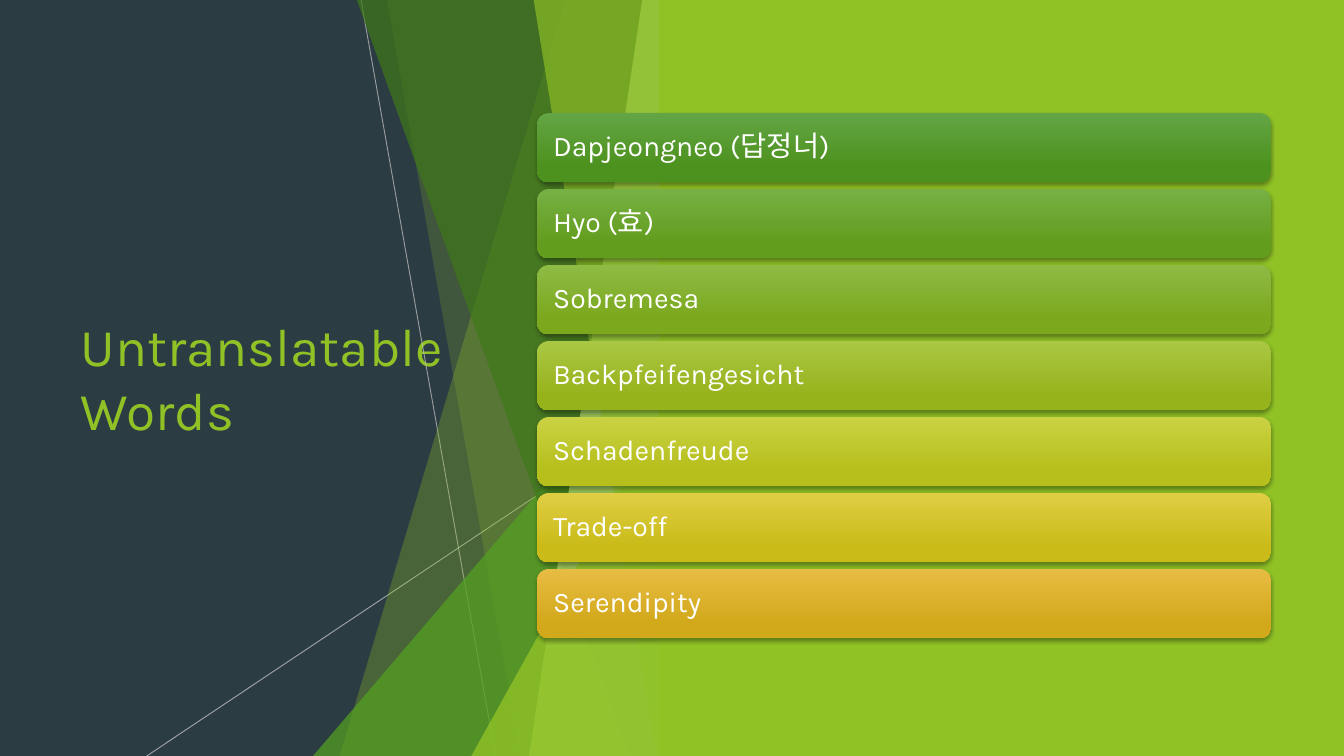
from lxml import etree
from pptx import Presentation
from pptx.dml.color import RGBColor
from pptx.enum.shapes import MSO_CONNECTOR, MSO_SHAPE
from pptx.enum.text import MSO_ANCHOR, PP_ALIGN
from pptx.oxml.ns import qn
from pptx.util import Cm, Pt

STRAIGHT = MSO_CONNECTOR.STRAIGHT
RECT, ROUNDED = MSO_SHAPE.RECTANGLE, MSO_SHAPE.ROUNDED_RECTANGLE
TRIANGLE = MSO_SHAPE.ISOSCELES_TRIANGLE
MIDDLE, LEFT = MSO_ANCHOR.MIDDLE, PP_ALIGN.LEFT

SLATE = RGBColor(0x2C, 0x3C, 0x43)
LIME = RGBColor(0x90, 0xC2, 0x26)
GREEN = RGBColor(0x54, 0xA0, 0x21)
FOREST = RGBColor(0x3F, 0x78, 0x19)
PALE = RGBColor(0xC0, 0xE4, 0x74)
SILVER = RGBColor(0xBF, 0xBF, 0xBF)
WHITE = RGBColor(0xFF, 0xFF, 0xFF)

WIDTH, HEIGHT = 38.38, 21.59
FACET_RIGHT = 19.18
PANEL_LEFT = 18.82
BAR_LEFT, BAR_TOP, BAR_WIDTH, BAR_HEIGHT = 15.34, 3.23, 20.96, 1.98
BAR_PITCH = 2.17

# Word, top and bottom colour of its bar
WORDS = [
    ("Dapjeongneo (답정너)", RGBColor(0x63, 0xA5, 0x45), RGBColor(0x4D, 0x92, 0x1E)),
    ("Hyo (효)", RGBColor(0x77, 0xB0, 0x44), RGBColor(0x62, 0x9D, 0x1E)),
    ("Sobremesa", RGBColor(0x8E, 0xBB, 0x44), RGBColor(0x7B, 0xA8, 0x1D)),
    ("Backpfeifengesicht", RGBColor(0xAA, 0xC7, 0x44), RGBColor(0x97, 0xB3, 0x1C)),
    ("Schadenfreude", RGBColor(0xCA, 0xD2, 0x43), RGBColor(0xB6, 0xBF, 0x1B)),
    ("Trade-off", RGBColor(0xDF, 0xCE, 0x43), RGBColor(0xCA, 0xBB, 0x19)),
    ("Serendipity", RGBColor(0xE7, 0xBC, 0x43), RGBColor(0xD2, 0xA9, 0x1B)),
]


def set_alpha(parent, percent):
    """Make the solid colour inside an element partly transparent."""
    color = next(parent.iter(qn("a:srgbClr")))
    etree.SubElement(color, qn("a:alpha"), val=str(percent * 1000))


class Deck:
    font = "Karla"

    def __init__(self, prs):
        self.s = prs.slides.add_slide(prs.slide_layouts[6])
        fill = self.s.background.fill
        fill.solid()
        fill.fore_color.rgb = SLATE

    def paint(self, sp, color, alpha=100):
        sp.shadow.inherit = False
        sp.fill.solid()
        sp.fill.fore_color.rgb = color
        sp.line.fill.background()
        if alpha < 100:
            set_alpha(sp.fill._xPr.find(qn("a:solidFill")), alpha)

    def line(self, x1, y1, x2, y2, alpha):
        ln = self.s.shapes.add_connector(STRAIGHT, Cm(x1), Cm(y1), Cm(x2), Cm(y2))
        ln.line.color.rgb = SILVER
        ln.line.width = Pt(0.75)
        sp_pr = ln._element.spPr
        set_alpha(sp_pr, alpha)
        etree.SubElement(sp_pr, qn("a:effectLst"))

    def facet(self, top_x, bottom_x, color, alpha):
        """Full-height sliver that ends at the common right edge."""
        builder = self.s.shapes.build_freeform(Cm(top_x), 0)
        corners = [(FACET_RIGHT, 0), (FACET_RIGHT, HEIGHT), (bottom_x, HEIGHT)]
        builder.add_line_segments([(Cm(x), Cm(y)) for x, y in corners])
        self.paint(builder.convert_to_shape(), color, alpha)

    def corner(self, left, top, color, alpha):
        """Right triangle standing on the bottom edge."""
        sp = self.s.shapes.add_shape(TRIANGLE, Cm(left), Cm(top),
                                     Cm(FACET_RIGHT - left), Cm(HEIGHT - top))
        sp.adjustments[0] = 1
        self.paint(sp, color, alpha)

    def panel(self, left, color):
        sp = self.s.shapes.add_shape(RECT, Cm(left), 0, Cm(WIDTH - left), Cm(HEIGHT))
        self.paint(sp, color)

    def text(self, sp, words, size, color):
        tf = sp.text_frame
        tf.word_wrap = True
        tf.vertical_anchor = MIDDLE
        p = tf.paragraphs[0]
        p.alignment = LEFT
        r = p.add_run()
        r.text = words
        r.font.name = self.font
        r.font.size = Pt(size)
        r.font.color.rgb = color
        return tf

    def title(self, words, left, top, width, height):
        sp = self.s.shapes.add_textbox(Cm(left), Cm(top), Cm(width), Cm(height))
        self.text(sp, words, 43, LIME)

    def bar(self, words, top, light, dark):
        sp = self.s.shapes.add_shape(ROUNDED, Cm(BAR_LEFT), Cm(top),
                                     Cm(BAR_WIDTH), Cm(BAR_HEIGHT))
        sp.line.fill.background()
        sp.fill.gradient()
        sp.fill.gradient_angle = 270
        for stop, color, position in zip(sp.fill.gradient_stops, (light, dark), (0, 0.78)):
            stop.color.rgb = color
            stop.position = position
        self.drop_shadow(sp)
        tf = self.text(sp, words, 23, WHITE)
        tf.margin_left = tf.margin_right = Cm(0.36)
        tf.paragraphs[0].line_spacing = 0.9

    def drop_shadow(self, sp):
        sp.shadow.inherit = False
        effects = sp._element.spPr.find(qn("a:effectLst"))
        shadow = etree.SubElement(effects, qn("a:outerShdw"), blurRad=str(Pt(3)),
                                  dist=str(Pt(2)), dir="5400000", rotWithShape="0")
        etree.SubElement(shadow, qn("a:srgbClr"), val="000000")
        set_alpha(shadow, 35)


def main():
    prs = Presentation()
    prs.slide_width, prs.slide_height = Cm(WIDTH), Cm(HEIGHT)
    deck = Deck(prs)

    # Title
    deck.title("Untranslatable Words", 2.06, 4.34, 11.18, 12.88)

    # Faceted divider
    deck.line(10.31, 0, 14.15, HEIGHT, 75)
    deck.line(FACET_RIGHT, 11.58, 4.19, HEIGHT, 80)
    deck.facet(16.15, 9.7, LIME, 30)
    deck.facet(11.05, 14.86, LIME, 20)
    deck.corner(8.94, 9.6, GREEN, 72)
    deck.facet(10.19, 17.98, FOREST, 70)
    deck.facet(18.34, 15.11, PALE, 70)
    deck.facet(15.24, 18.75, LIME, 65)
    deck.corner(13.46, 11.3, LIME, 80)

    # Right panel with the word list
    deck.panel(PANEL_LEFT, LIME)
    for i, (word, light, dark) in enumerate(WORDS):
        deck.bar(word, BAR_TOP + i * BAR_PITCH, light, dark)

    prs.save("out.pptx")


if __name__ == "__main__":
    main()
